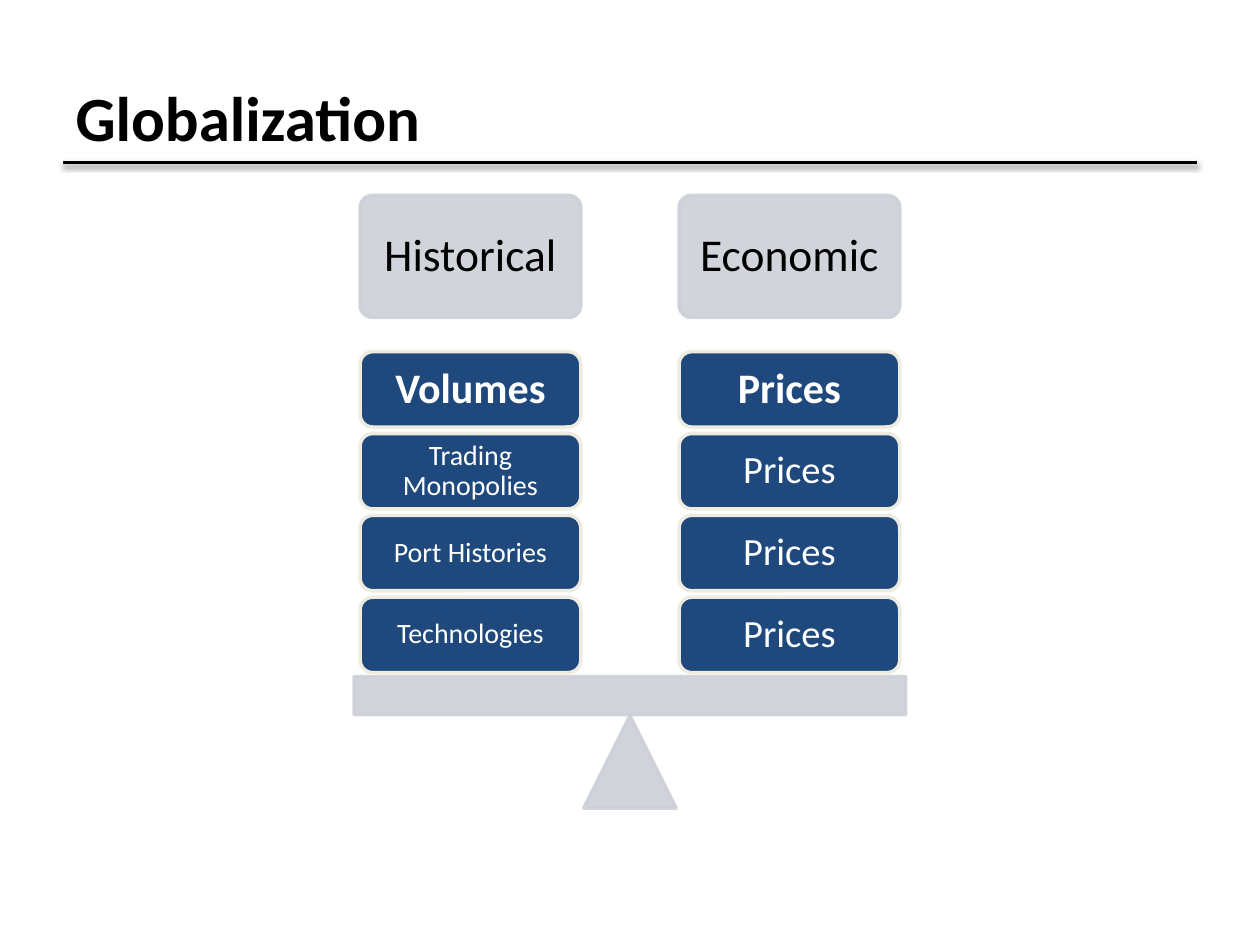
from lxml.etree import SubElement as Sub
from pptx import Presentation
from pptx.dml.color import RGBColor
from pptx.enum.shapes import MSO_CONNECTOR as Link, MSO_SHAPE as Kind
from pptx.enum.text import MSO_ANCHOR as Anchor, PP_ALIGN as Align
from pptx.oxml.ns import qn
from pptx.util import Cm, Pt

TITLE = "Globalization"
SIDES = [
    ("Historical", 7.26, 16, 0.18,
     ["Volumes", "Trading Monopolies", "Port Histories", "Technologies"]),
    ("Economic", 13.69, 22, 0.23,
     ["Prices", "Prices", "Prices", "Prices"]),
]
GREY, BLUE, CREAM = "CDD0D7", "1F497D", "EEECE1"
BLACK, WHITE = "000000", "FFFFFF"
WIDE, HIGH, STEP = 4.45, 1.52, 1.65
HEAD_TOP, HEAD_HIGH, STACK_TOP = 3.94, 2.46, 7.09


def tint(color, code, alpha=100):
    color.rgb = RGBColor.from_string(code)
    if alpha < 100:
        node = color._xFill.find(qn("a:srgbClr"))
        Sub(node, qn("a:alpha"), val=str(alpha * 1000))


def block(kind, box, fill, edge, alpha=100):
    shape = slide.shapes.add_shape(kind, *map(Cm, box))
    shape.shadow.inherit = False
    shape.fill.solid()
    tint(shape.fill.fore_color, fill, alpha)
    shape.line.width = Pt(2)
    shape.line.fill.solid()
    tint(shape.line.fill.fore_color, edge, alpha)
    return shape


def style(para, size, code, bold=False):
    font = para.font
    font.name, font.size, font.bold = "Calibri", Pt(size), bold
    tint(font.color, code)


def label(shape, text, size, code, inset, bold=False):
    frame = shape.text_frame
    frame.word_wrap = True
    frame.vertical_anchor = Anchor.MIDDLE
    frame.margin_left = frame.margin_right = Cm(inset)
    frame.margin_top = frame.margin_bottom = Cm(inset)
    para = frame.paragraphs[0]
    para.text = text
    para.alignment = Align.CENTER
    para.line_spacing = 0.9
    style(para, size, code, bold)


def rule(left, right, y):
    line = slide.shapes.add_connector(
        Link.STRAIGHT, Cm(left), Cm(y), Cm(right), Cm(y))
    line.line.width = Pt(2)
    tint(line.line.color, BLACK)
    glow = Sub(line._element.spPr, qn("a:effectLst"))
    cast = Sub(glow, qn("a:outerShdw"), blurRad=str(Pt(3.1)),
               dist=str(Pt(1.6)), dir="5400000", rotWithShape="0")
    dark = Sub(cast, qn("a:srgbClr"), val=BLACK)
    Sub(dark, qn("a:alpha"), val="38000")


deck = Presentation()
deck.slide_width, deck.slide_height = Cm(25.4), Cm(19.05)
slide = deck.slides.add_slide(deck.slide_layouts[5])

rule(1.27, 24.13, 3.28)
title = slide.shapes.title
title.left, title.top, title.width, title.height = map(
    Cm, (1.27, 0.76, 22.86, 3.18))
title.text = TITLE
title.text_frame.vertical_anchor = Anchor.MIDDLE
para = title.text_frame.paragraphs[0]
para.alignment = Align.LEFT
style(para, 36, BLACK, True)

block(Kind.ISOSCELES_TRIANGLE, (11.77, 14.43, 1.86, 1.86), GREY, GREY, 90)
block(Kind.RECTANGLE, (7.14, 13.64, 11.12, 0.77), GREY, GREY, 90)

for head, left, size, inset, items in SIDES:
    card = block(Kind.ROUNDED_RECTANGLE, (left, HEAD_TOP, WIDE, HEAD_HIGH),
                 GREY, GREY, 90)
    card.adjustments[0] = 0.1
    label(card, head, 26, BLACK, 0.28)
    for row, text in enumerate(items):
        card = block(Kind.ROUNDED_RECTANGLE,
                     (left, STACK_TOP + row * STEP, WIDE, HIGH), BLUE, CREAM)
        if row == 0:
            label(card, text, 24, WHITE, 0.25, True)
        else:
            label(card, text, size, WHITE, inset)

deck.save("out.pptx")
